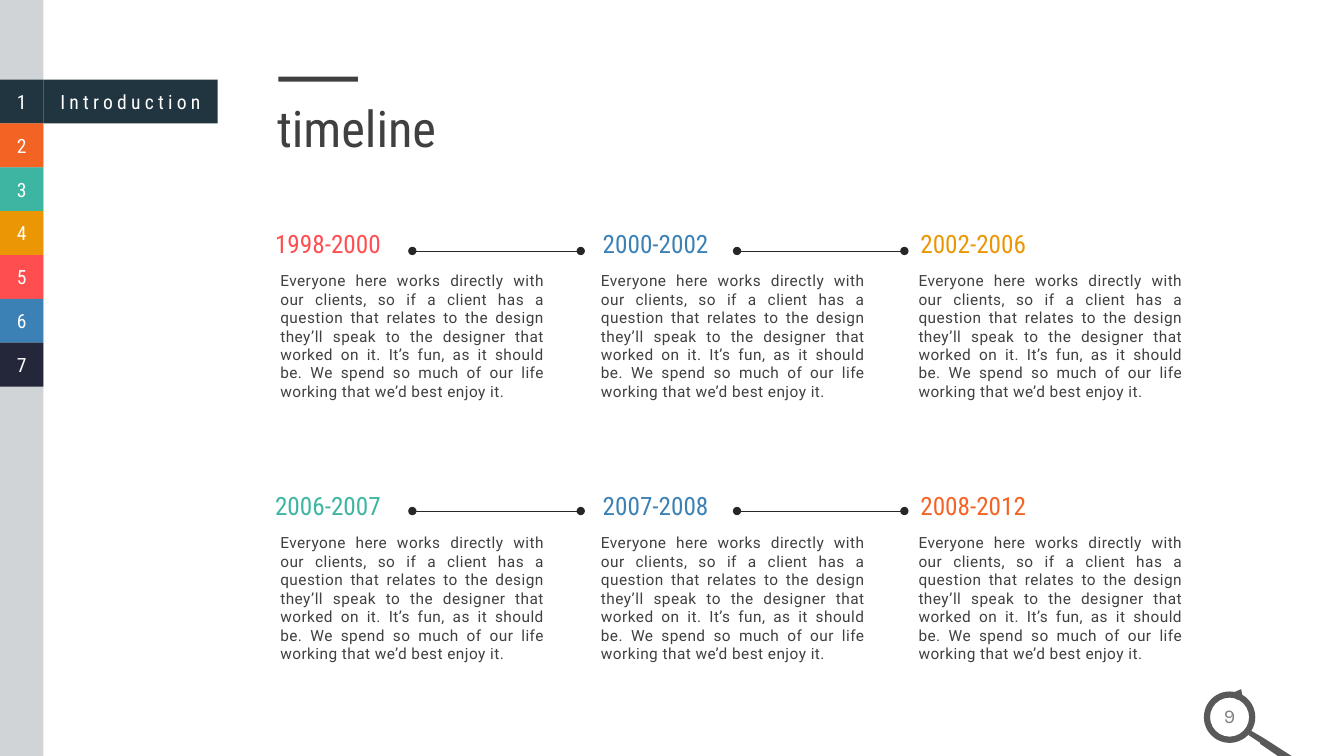
from lxml import etree
from pptx import Presentation
from pptx.dml.color import RGBColor
from pptx.enum.shapes import MSO_CONNECTOR, MSO_SHAPE
from pptx.enum.text import MSO_ANCHOR, PP_ALIGN
from pptx.oxml.ns import qn
from pptx.util import Inches, Pt

RECTANGLE, DONUT, ARROW = MSO_SHAPE.RECTANGLE, MSO_SHAPE.DONUT, MSO_SHAPE.RIGHT_ARROW
STRAIGHT = MSO_CONNECTOR.STRAIGHT
MIDDLE, TOP = MSO_ANCHOR.MIDDLE, MSO_ANCHOR.TOP
LEFT, CENTER, JUSTIFY = PP_ALIGN.LEFT, PP_ALIGN.CENTER, PP_ALIGN.JUSTIFY

WHITE = RGBColor(0xFF, 0xFF, 0xFF)
PALE_GRAY = RGBColor(0xD1, 0xD4, 0xD6)
PAGE_GRAY = RGBColor(0x80, 0x80, 0x80)
LENS_GRAY = RGBColor(0x59, 0x59, 0x59)
TEXT_GRAY = RGBColor(0x40, 0x40, 0x40)
LINE_GRAY = RGBColor(0x26, 0x26, 0x26)
SLATE = RGBColor(0x21, 0x35, 0x40)
ORANGE = RGBColor(0xF3, 0x63, 0x24)
TEAL = RGBColor(0x3C, 0xB5, 0xA2)
AMBER = RGBColor(0xEB, 0x96, 0x05)
RED = RGBColor(0xFE, 0x4E, 0x50)
BLUE = RGBColor(0x3C, 0x81, 0xB5)
NAVY = RGBColor(0x24, 0x27, 0x3A)

CONDENSED, BODY_FONT, PAGE_FONT = "Roboto Condensed", "Roboto", "Karla"
TAB_COLORS = [SLATE, ORANGE, TEAL, AMBER, RED, BLUE, NAVY]
TAB_PITCH = 0.435
DESCRIPTION = (
    "Everyone here works directly with our clients, so if a client has a question "
    "that relates to the design they’ll speak to the designer that worked on it. "
    "It’s fun, as it should be. We spend so much of our life working that we’d best "
    "enjoy it."
)
COLUMN_LEFTS = [2.63, 5.88, 9.03]
BODY_SHIFTS = [0.02, -0.05, -0.05]
LINK_SPANS = [(4.09, 5.76), (7.31, 8.97)]
# Heading top, link height and periods of each row
ROWS = [
    (2.22, 2.49, [("1998-2000", RED), ("2000-2002", BLUE), ("2002-2006", AMBER)]),
    (4.82, 5.07, [("2006-2007", TEAL), ("2007-2008", BLUE), ("2008-2012", ORANGE)]),
]


def fill_plain(shape, color):
    shape.shadow.inherit = False
    shape.fill.solid()
    shape.fill.fore_color.rgb = color
    shape.line.fill.background()


def add_block(slide, kind, left, top, width, height, color):
    shape = slide.shapes.add_shape(
        kind, Inches(left), Inches(top), Inches(width), Inches(height)
    )
    fill_plain(shape, color)
    return shape


def write(shape, text, font, size, color, align=LEFT, anchor=TOP, insets=(0.1, 0.05), spacing=0):
    """Put one run into the shape; spacing is the letter spacing in points."""
    frame = shape.text_frame
    frame.word_wrap = True
    frame.vertical_anchor = anchor
    frame.margin_left = frame.margin_right = Inches(insets[0])
    frame.margin_top = frame.margin_bottom = Inches(insets[1])
    paragraph = frame.paragraphs[0]
    paragraph.alignment = align
    run = paragraph.add_run()
    run.text = text
    run.font.name = font
    run.font.size = Pt(size)
    run.font.color.rgb = color
    if spacing:
        run.font._element.set("spc", str(round(spacing * 100)))


def add_text(slide, left, top, width, height, *content, **options):
    box = slide.shapes.add_textbox(
        Inches(left), Inches(top), Inches(width), Inches(height)
    )
    write(box, *content, **options)


def add_tab(slide, left, top, width, color, label):
    tab = add_block(slide, RECTANGLE, left, top, width, TAB_PITCH, color)
    write(tab, label, CONDENSED, 14, WHITE, CENTER, MIDDLE, insets=(0, 0), spacing=3)


def add_sidebar(slide, left, top, width, height):
    add_block(slide, RECTANGLE, left, top, width, height, PALE_GRAY)
    first_tab = top + 0.79
    add_tab(slide, left + width, first_tab, 1.73, SLATE, "Introduction")
    for index, color in enumerate(TAB_COLORS):
        add_tab(slide, left, first_tab + index * TAB_PITCH, width, color, str(index + 1))


def add_title(slide, left, top):
    add_block(slide, RECTANGLE, left + 0.11, top, 0.79, 0.05, TEXT_GRAY)
    add_text(slide, left, top + 0.15, 2.44, 0.71, "timeline", CONDENSED, 36, TEXT_GRAY)


def add_period(slide, left, top, body_shift, years, color):
    add_text(slide, left, top, 1.37, 0.5, years, CONDENSED, 18, color)
    add_text(
        slide, left + body_shift, top + 0.4, 2.88, 1.43,
        DESCRIPTION, BODY_FONT, 11, TEXT_GRAY, JUSTIFY, insets=(0.13, 0.07), spacing=0.3,
    )


def add_link(slide, start, end, height):
    """Draw a thin level line with a dot at each end."""
    link = slide.shapes.add_connector(
        STRAIGHT, Inches(start), Inches(height), Inches(end), Inches(height)
    )
    link.line.color.rgb = LINE_GRAY
    link.line.width = Pt(0.5)
    line = link.line._get_or_add_ln()
    for end_name in ("a:headEnd", "a:tailEnd"):
        etree.SubElement(line, qn(end_name), type="oval")
    etree.SubElement(link._element.spPr, qn("a:effectLst"))


def add_timeline(slide):
    for top, link_height, periods in ROWS:
        for left, shift, (years, color) in zip(COLUMN_LEFTS, BODY_SHIFTS, periods):
            add_period(slide, left, top, shift, years, color)
        for start, end in LINK_SPANS:
            add_link(slide, start, end, link_height)


def add_page_number(slide, left, top, number):
    """Draw a magnifying glass with the page number in its lens."""
    add_text(
        slide, left - 0.05, top + 0.07, 0.61, 0.34,
        number, PAGE_FONT, 14, PAGE_GRAY, CENTER,
    )
    spur = add_block(slide, ARROW, left + 0.29, top - 0.03, 0.11, 0.11, LENS_GRAY)
    spur.adjustments[0], spur.adjustments[1] = 0.32, 0.64
    spur.rotation = 298.7
    lens = add_block(slide, DONUT, left, top, 0.51, 0.51, LENS_GRAY)
    lens.adjustments[0] = 0.12
    outline = [
        (0.47, 0.39), (0.59, 0.46), (0.98, 0.71), (0.98, 0.76),
        (0.94, 0.78), (0.56, 0.52), (0.56, 0.51), (0.44, 0.43),
    ]
    points = [(Inches(left + x), Inches(top + y)) for x, y in outline]
    builder = slide.shapes.build_freeform(*points[0])
    builder.add_line_segments(points[1:], close=True)
    fill_plain(builder.convert_to_shape(), LENS_GRAY)


def main():
    presentation = Presentation()
    presentation.slide_width = Inches(13.33)
    presentation.slide_height = Inches(7.5)
    slide = presentation.slides.add_slide(presentation.slide_layouts[6])
    add_sidebar(slide, 0, 0, 0.43, 7.5)
    add_title(slide, 2.65, 0.76)
    add_timeline(slide)
    add_page_number(slide, 11.94, 6.86, "9")
    presentation.save("out.pptx")


if __name__ == "__main__":
    main()
